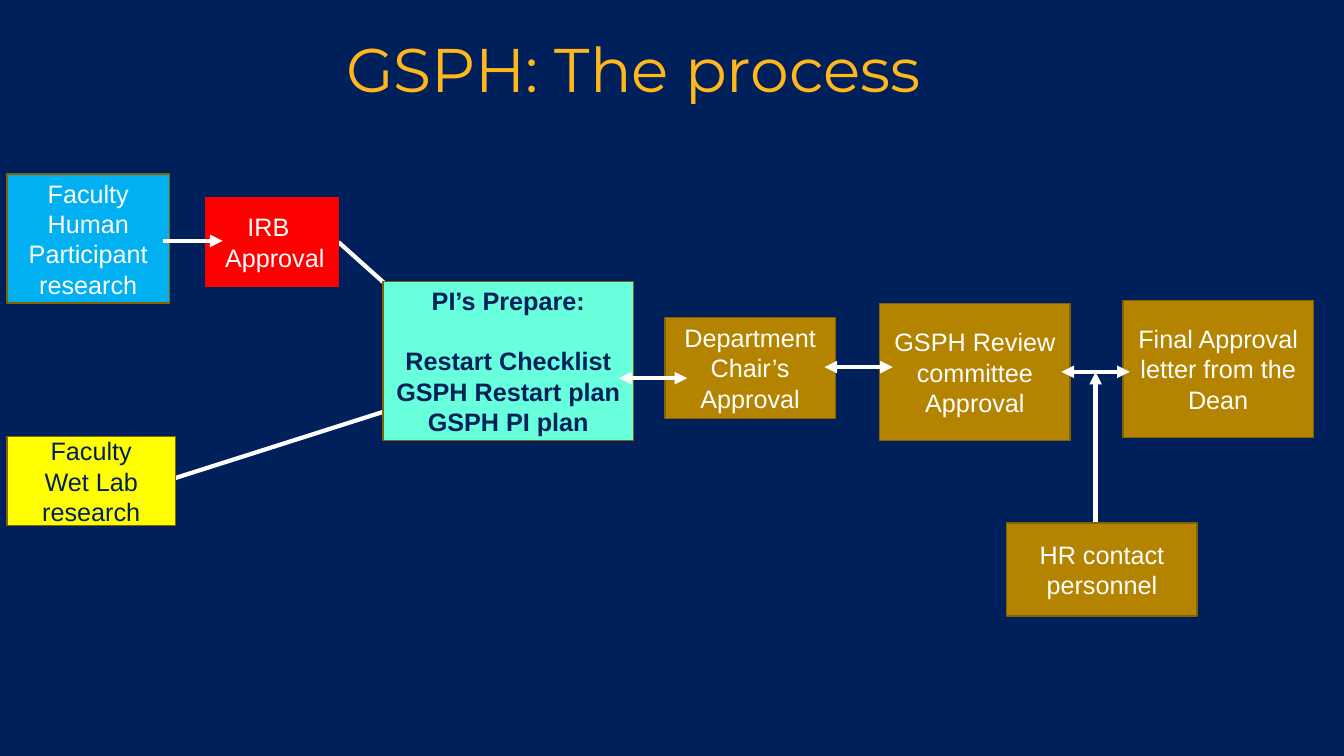
from dataclasses import dataclass

from lxml.etree import SubElement
from pptx import Presentation
from pptx.dml.color import RGBColor
from pptx.enum.shapes import MSO_CONNECTOR, MSO_SHAPE
from pptx.enum.text import MSO_ANCHOR, PP_ALIGN
from pptx.oxml.ns import qn
from pptx.slide import Slide
from pptx.util import Cm, Pt

HUES = {
    "navy": "00205B", "gold": "FFB71B", "white": "FFFFFF", "blue": "00B0F0",
    "red": "FF0000", "yellow": "FFFF00", "mint": "67FFDC", "ochre": "B48400",
    "brown": "856200",
}


@dataclass
class Box:
    lines: list[str]
    left: float
    top: float
    width: float
    height: float
    fill: str = "ochre"
    edge: str = "brown"
    ink: str = "white"
    bold: bool = False
    gap: float = 0


@dataclass
class Link:
    start: tuple[float, float]
    end: tuple[float, float]
    double: bool = False


BOXES = [
    Box(["Faculty", "Human Participant", "research"], 0.18, 4.39, 4.09, 3.25, "blue"),
    Box(["IRB ", " Approval"], 5.18, 4.98, 3.35, 2.24, "red", "red"),
    Box(["Faculty", "Wet Lab research"], 0.18, 11, 4.24, 2.24, "yellow", ink="navy"),
    Box(["PI’s Prepare:", "Restart Checklist", "GSPH Restart plan", "GSPH PI plan"],
        9.65, 7.09, 6.32, 4.01, "mint", ink="navy", bold=True, gap=21.5),
    Box(["Department Chair’s Approval"], 16.76, 8, 4.29, 2.54),
    Box(["GSPH Review committee Approval"], 22.17, 7.65, 4.8, 3.45),
    Box(["Final Approval letter from the Dean"], 28.3, 7.57, 4.8, 3.45),
    Box(["HR contact personnel"], 25.37, 13.18, 4.8, 2.34),
]
UNDER = [
    Link((27.61, 13.46), (27.61, 9.37)),
    Link((2.77, 12.57), (11.13, 9.91)),
    Link((8.53, 6.1), (11.02, 8.33)),
]
OVER = [
    Link((4.11, 6.07), (5.61, 6.07)),
    Link((15.6, 9.53), (17.32, 9.53), True),
    Link((20.78, 9.25), (22.5, 9.25), True),
    Link((26.75, 9.37), (28.47, 9.37), True),
]


def hue(name: str) -> RGBColor:
    return RGBColor.from_string(HUES[name])


def draw_title(slide: Slide, text: str) -> None:
    title = slide.shapes.title
    title.left, title.top, title.width, title.height = Cm(1.37), Cm(0.86), Cm(29.21), Cm(1.93)
    frame = title.text_frame
    frame.text = text
    frame.vertical_anchor = MSO_ANCHOR.MIDDLE
    line = frame.paragraphs[0]
    line.alignment = PP_ALIGN.CENTER
    line.line_spacing = 0.9
    line.font.name = "Montserrat"
    line.font.size = Pt(44)
    line.font.color.rgb = hue("gold")


def draw_box(slide: Slide, box: Box) -> None:
    shape = slide.shapes.add_shape(
        MSO_SHAPE.RECTANGLE, Cm(box.left), Cm(box.top), Cm(box.width), Cm(box.height))
    shape.shadow.inherit = False
    shape.fill.solid()
    shape.fill.fore_color.rgb = hue(box.fill)
    shape.line.color.rgb = hue(box.edge)
    shape.line.width = Pt(1)
    frame = shape.text_frame
    frame.word_wrap = True
    frame.vertical_anchor = MSO_ANCHOR.MIDDLE
    frame.text = "\n".join(box.lines)
    for line in frame.paragraphs:
        line.alignment = PP_ALIGN.CENTER
        line.font.name = "Arial"
        line.font.size = Pt(18)
        line.font.bold = box.bold
        line.font.color.rgb = hue(box.ink)
    if box.gap:
        frame.paragraphs[0].space_after = Pt(box.gap)


def draw_link(slide: Slide, link: Link) -> None:
    points = [Cm(value) for value in (*link.start, *link.end)]
    line = slide.shapes.add_connector(MSO_CONNECTOR.STRAIGHT, *points)
    line.line.color.rgb = hue("white")
    line.line.width = Pt(3)
    stroke = line.line._get_or_add_ln()
    for tip in ("a:headEnd", "a:tailEnd") if link.double else ("a:tailEnd",):
        SubElement(stroke, qn(tip), type="triangle")
    SubElement(line._element.spPr, qn("a:effectLst"))


def main() -> None:
    deck = Presentation()
    deck.slide_width, deck.slide_height = Cm(33.87), Cm(19.05)
    slide = deck.slides.add_slide(deck.slide_layouts[5])
    slide.background.fill.solid()
    slide.background.fill.fore_color.rgb = hue("navy")
    draw_title(slide, "GSPH: The process")
    for link in UNDER:
        draw_link(slide, link)
    for box in BOXES:
        draw_box(slide, box)
    for link in OVER:
        draw_link(slide, link)
    deck.save("out.pptx")


if __name__ == "__main__":
    main()
